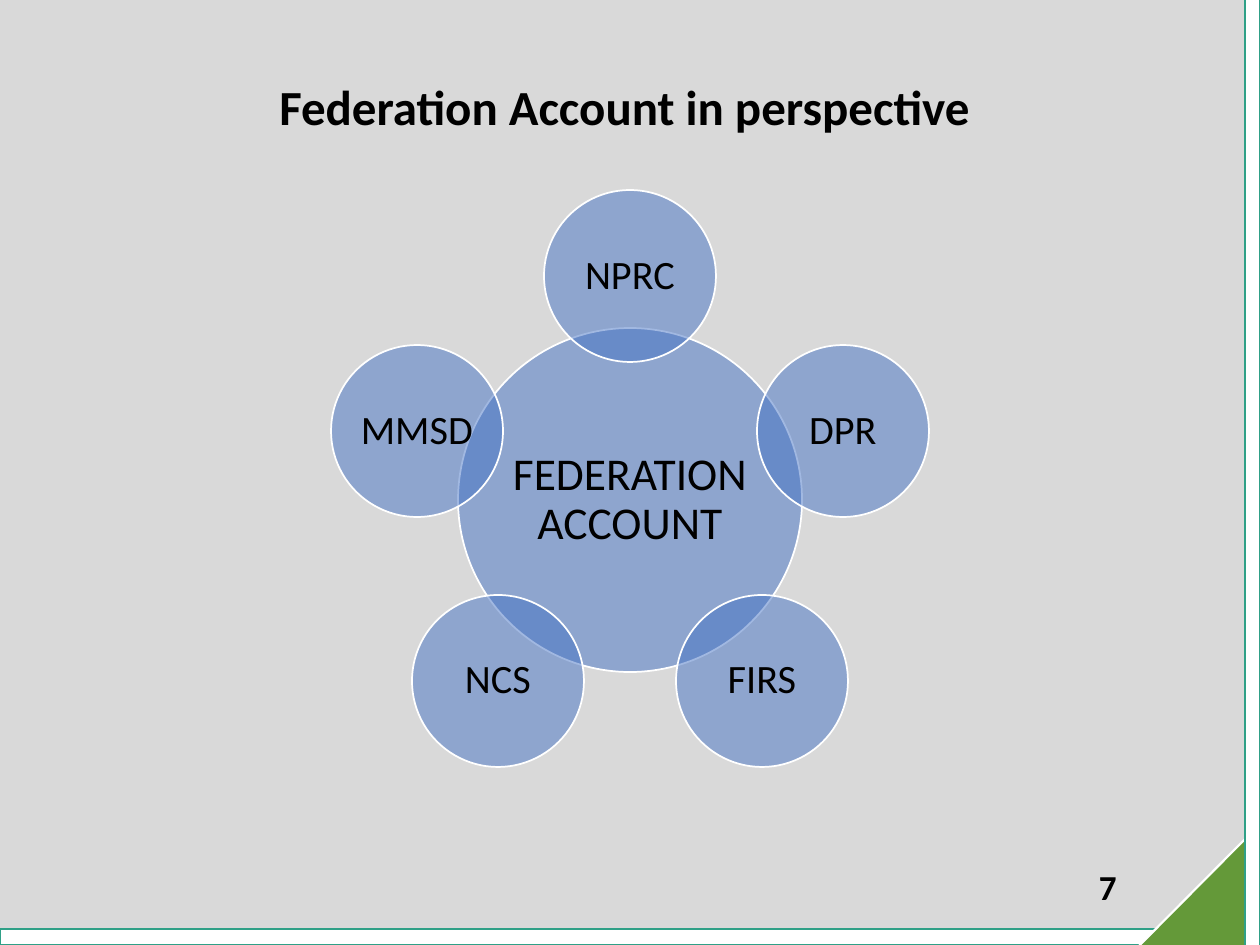
from dataclasses import dataclass
from math import cos, radians, sin

from lxml import etree
from pptx import Presentation
from pptx.dml.color import RGBColor
from pptx.enum.shapes import MSO_SHAPE
from pptx.enum.text import MSO_ANCHOR, PP_ALIGN
from pptx.oxml.ns import qn
from pptx.slide import Slide
from pptx.text.text import TextFrame
from pptx.util import Emu, Pt

RECT, TRIANGLE, OVAL = MSO_SHAPE.RECTANGLE, MSO_SHAPE.RIGHT_TRIANGLE, MSO_SHAPE.OVAL
CENTER, RIGHT = PP_ALIGN.CENTER, PP_ALIGN.RIGHT
MIDDLE = MSO_ANCHOR.MIDDLE
EMU_PER_PX = 914400 / 126


@dataclass(frozen=True)
class Theme:
    font: str = "Calibri"
    background: str = "D9D9D9"
    text: str = "000000"
    white: str = "FFFFFF"
    edge: str = "2FA087"
    corner: str = "649939"
    circle: str = "4472C4"
    circle_alpha: int = 50
    title_size: int = 28
    hub_size: int = 26
    agency_size: int = 23
    number_size: int = 20
    frame_line: float = 1.25
    circle_line: float = 1


@dataclass(frozen=True)
class Box:
    left: int
    top: int
    width: int
    height: int

    def emu(self) -> tuple[Emu, Emu, Emu, Emu]:
        return px(self.left), px(self.top), px(self.width), px(self.height)


@dataclass(frozen=True)
class FramePart:
    kind: MSO_SHAPE
    box: Box
    fill: str
    line: str
    rotation: int = 0


@dataclass(frozen=True)
class Circle:
    label: str
    x: int
    y: int
    radius: int
    size: int


THEME = Theme()
FRAME = [
    FramePart(RECT, Box(0, 929, 1260, 16), THEME.white, THEME.edge),
    FramePart(TRIANGLE, Box(1119, 835, 131, 130), THEME.corner, THEME.white, 270),
    FramePart(RECT, Box(764, 480, 977, 15), THEME.white, THEME.edge, 270),
]
HUB = Circle("FEDERATION ACCOUNT", 630, 500, 172, THEME.hub_size)
AGENCIES = ["NPRC", "DPR", "FIRS", "NCS", "MMSD"]
AGENCY_RADIUS = HUB.radius // 2
ORBIT = 224


def px(length: int) -> Emu:
    return Emu(round(length * EMU_PER_PX))


def rgb(value: str) -> RGBColor:
    return RGBColor.from_string(value)


def write(frame: TextFrame, text: str, size: int, align: PP_ALIGN, bold: bool) -> None:
    frame.word_wrap = True
    frame.vertical_anchor = MIDDLE
    frame.text = text
    paragraph = frame.paragraphs[0]
    paragraph.alignment = align
    font = paragraph.font
    font.name, font.size, font.bold = THEME.font, Pt(size), bold
    font.color.rgb = rgb(THEME.text)


def draw_shape(slide: Slide, kind: MSO_SHAPE, box: Box, fill: str, line: str, weight: float):
    shape = slide.shapes.add_shape(kind, *box.emu())
    shape.shadow.inherit = False
    shape.fill.solid()
    shape.fill.fore_color.rgb = rgb(fill)
    shape.line.color.rgb = rgb(line)
    shape.line.width = Pt(weight)
    return shape


def draw_frame_part(slide: Slide, part: FramePart) -> None:
    shape = draw_shape(slide, part.kind, part.box, part.fill, part.line, THEME.frame_line)
    shape.rotation = part.rotation


def draw_circle(slide: Slide, circle: Circle) -> None:
    side = 2 * circle.radius
    box = Box(circle.x - circle.radius, circle.y - circle.radius, side, side)
    shape = draw_shape(slide, OVAL, box, THEME.circle, THEME.white, THEME.circle_line)
    color = shape.fill._xPr.find(qn("a:solidFill"))[0]
    etree.SubElement(color, qn("a:alpha")).set("val", str(THEME.circle_alpha * 1000))
    frame = shape.text_frame
    frame.margin_left = frame.margin_right = frame.margin_top = frame.margin_bottom = 0
    write(frame, circle.label, circle.size, CENTER, False)
    frame.paragraphs[0].line_spacing = 0.9


def agency_circles() -> list[Circle]:
    """Space the agencies evenly clockwise around the hub, starting at the top."""
    circles = []
    for index, label in enumerate(AGENCIES):
        angle = radians(index * 360 / len(AGENCIES))
        x = round(HUB.x + ORBIT * sin(angle))
        y = round(HUB.y - ORBIT * cos(angle))
        circles.append(Circle(label, x, y, AGENCY_RADIUS, THEME.agency_size))
    return circles


def main() -> None:
    deck = Presentation()
    deck.slide_width, deck.slide_height = px(1260), px(945)
    slide = deck.slides.add_slide(deck.slide_layouts[5])
    slide.background.fill.solid()
    slide.background.fill.fore_color.rgb = rgb(THEME.background)

    for part in FRAME:
        draw_frame_part(slide, part)

    number = slide.shapes.add_textbox(*Box(1050, 861, 79, 50).emu())
    write(number.text_frame, "7", THEME.number_size, RIGHT, True)

    title = slide.shapes.title
    title.left, title.top, title.width, title.height = Box(84, 44, 1081, 123).emu()
    write(title.text_frame, "Federation Account in perspective", THEME.title_size, CENTER, True)

    for circle in [HUB, *agency_circles()]:
        draw_circle(slide, circle)

    deck.save("out.pptx")


if __name__ == "__main__":
    main()
